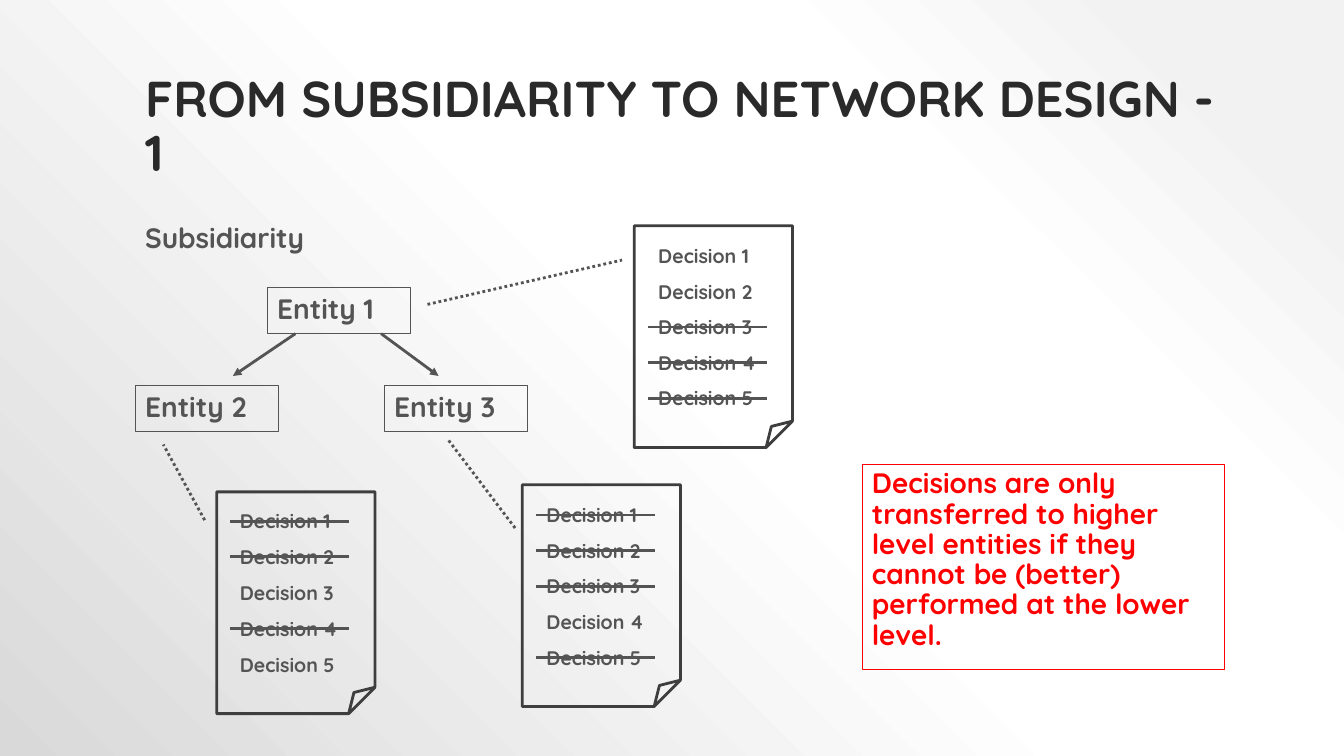
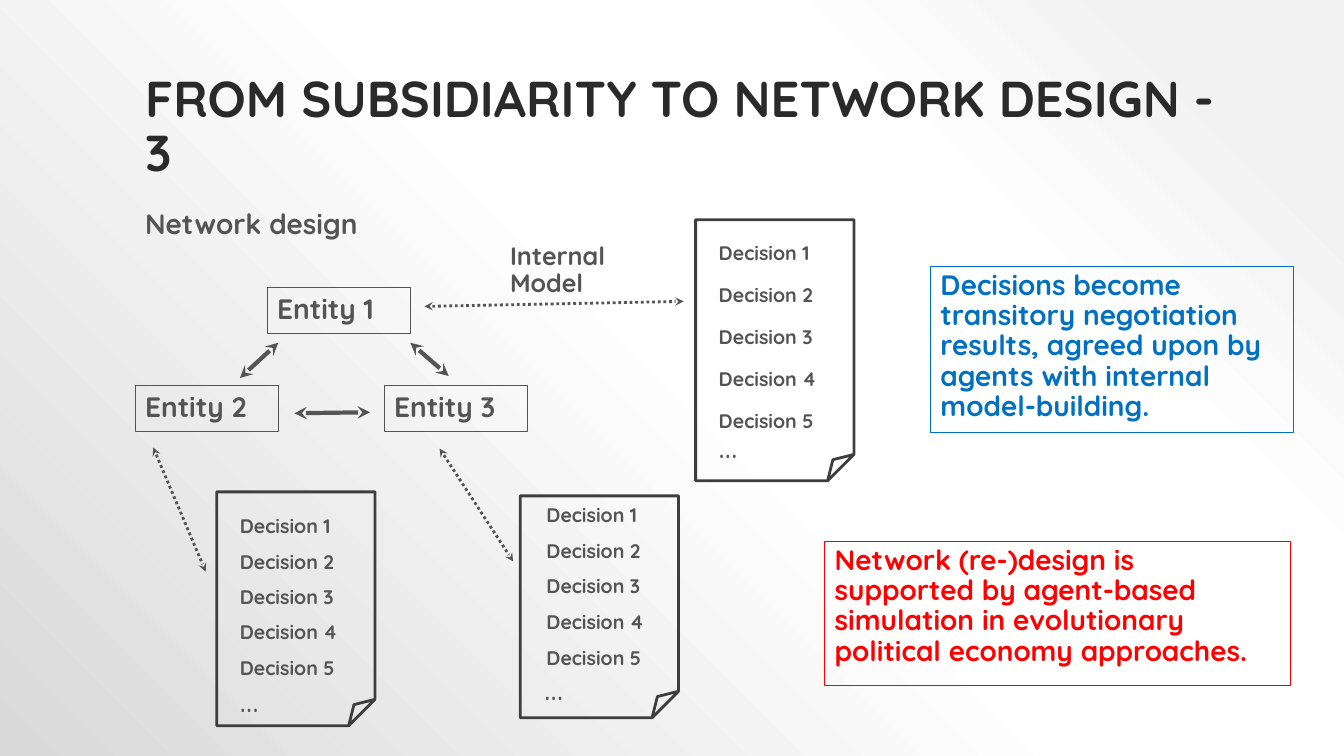
import pptx
import pptx.util
import pptx.dml.color
import pptx.enum.dml
import pptx.enum.shapes
import pptx.enum.text
import pptx.oxml
import pptx.oxml.ns
import lxml.etree

Inches = pptx.util.Inches
RGBColor = pptx.dml.color.RGBColor
SHAPE = pptx.enum.shapes.MSO_SHAPE
ANCHOR = pptx.enum.text.MSO_ANCHOR
qn = pptx.oxml.ns.qn

INK = RGBColor(0x2A, 0x2A, 0x2A)
GREY = RGBColor(0x54, 0x54, 0x54)
EDGE = RGBColor(0x3E, 0x3E, 0x3E)
RED = RGBColor(0xFF, 0x00, 0x00)
BLUE = RGBColor(0x00, 0x70, 0xC0)

BACKGROUND = (
    '<a:gradFill xmlns:a="http://schemas.openxmlformats.org/drawingml/2006/main" rotWithShape="1"><a:gsLst>'
    + "".join(f'<a:gs pos="{pos}000"><a:srgbClr val="{color}"/></a:gs>' for pos, color in
              [(10, "F2F2F2"), (28, "FFFFFF"), (48, "FFFFFF"), (100, "D9D9D9")])
    + '</a:gsLst><a:path path="circle"><a:fillToRect l="100000" b="100000"/></a:path></a:gradFill>'
)


def write(sp, text, size, color=GREY, bold=True, anchor=ANCHOR.TOP, wrap=True):
    tf = sp.text_frame
    frame = {"word_wrap": wrap, "auto_size": pptx.enum.text.MSO_AUTO_SIZE.NONE, "vertical_anchor": anchor}
    for name, value in frame.items():
        setattr(tf, name, value)
    p = tf.paragraphs[0]
    p.alignment = pptx.enum.text.PP_ALIGN.LEFT
    p.line_spacing = 0.9
    r = p.add_run()
    r.text = text
    r.font.color.rgb = color
    for name, value in {"name": "Quicksand", "size": pptx.util.Pt(size), "bold": bold}.items():
        setattr(r.font, name, value)


def add_line(s, ends, width=2, dotted=False, head=None, tail=None):
    c = s.shapes.add_connector(pptx.enum.shapes.MSO_CONNECTOR.STRAIGHT, *map(Inches, ends))
    c.line.color.rgb = GREY
    c.line.width = pptx.util.Pt(width)
    if dotted:
        c.line.dash_style = pptx.enum.dml.MSO_LINE.ROUND_DOT
    spPr = c._element.spPr
    for tag, kind in [("a:headEnd", head), ("a:tailEnd", tail)]:
        if kind:
            lxml.etree.SubElement(spPr.find(qn("a:ln")), qn(tag)).set("type", kind)
    lxml.etree.SubElement(spPr, qn("a:effectLst"))


entities = [
    ((2.65, 2.85, 1.42, 0.46), "Entity 1"),
    ((1.34, 3.82, 1.42, 0.46), "Entity 2"),
    ((3.81, 3.82, 1.42, 0.46), "Entity 3"),
]

slides = [
    {
        "title": "FROM SUBSIDIARITY TO NETWORK DESIGN - 1",
        "labels": [((1.34, 2.18, 2.02, 0.47), "Subsidiarity", 20)],
        "sheets": [
            ((6.29, 2.24, 1.57, 2.2), 6.43, 2.4, 3.81, [3, 4, 5]),
            ((5.18, 4.81, 1.57, 2.2), 5.32, 4.97, 6.38, [1, 2, 3, 5]),
            ((2.15, 4.88, 1.57, 2.2), 2.28, 5.03, 6.45, [1, 2, 4]),
        ],
        "ellipses": [],
        "notes": [
            ((8.55, 4.61, 3.6, 2.03), RED,
             "Decisions are only transferred to higher level entities if they cannot be (better) "
             "performed at the lower level."),
        ],
        "links": [(2.93, 3.31, 2.31, 3.73), (3.78, 3.31, 4.35, 3.73)],
        "link_format": {"tail": "triangle"},
        "dotted": [(4.24, 3.02, 6.17, 2.58), (4.45, 4.37, 5.11, 5.24), (2.03, 5.16, 1.62, 4.41)],
        "dotted_format": {"dotted": True},
    },
    {
        "title": "FROM SUBSIDIARITY TO NETWORK DESIGN - 3",
        "labels": [
            ((1.34, 2.04, 2.45, 0.53), "Network design", 20),
            ((4.96, 2.37, 1.42, 0.65), "Internal Model", 18),
        ],
        "sheets": [
            ((6.9, 2.18, 1.57, 2.59), 7.03, 2.37, 4.03, []),
            ((5.16, 4.92, 1.57, 2.2), 5.32, 4.97, 6.38, []),
            ((2.15, 4.88, 1.57, 2.32), 2.28, 5.08, 6.48, []),
        ],
        "ellipses": [(7.03, 4.21), (5.3, 6.61), (2.28, 6.73)],
        "notes": [
            ((9.23, 2.64, 3.6, 1.65), BLUE,
             "Decisions become transitory negotiation results, agreed upon by agents with internal model-building."),
            ((8.18, 5.37, 4.62, 1.43), RED,
             "Network (re-)design is supported by agent-based simulation in evolutionary political "
             "economy approaches."),
        ],
        "links": [(4.07, 3.4, 4.45, 3.73), (2.38, 3.75, 2.76, 3.4), (2.92, 4.1, 3.67, 4.09)],
        "link_format": {"width": 3, "head": "stealth", "tail": "stealth"},
        "dotted": [(4.21, 3.04, 6.78, 2.99), (1.52, 4.44, 2.04, 5.67), (4.36, 4.45, 5.09, 5.57)],
        "dotted_format": {"dotted": True, "head": "stealth", "tail": "stealth"},
    },
]

prs = pptx.Presentation()
prs.slide_width = Inches(13.33)
prs.slide_height = Inches(7.5)

master = prs.slide_master
master.background.fill.solid()
solid = master._element.find(".//" + qn("p:bgPr")).find(qn("a:solidFill"))
solid.getparent().replace(solid, pptx.oxml.parse_xml(BACKGROUND))

for content in slides:
    s = prs.slides.add_slide(prs.slide_layouts[5])
    title = s.shapes.title
    for name, value in {"left": 1.34, "top": 0.92, "width": 10.98, "height": 0.94}.items():
        setattr(title, name, Inches(value))
    write(title, content["title"], 36, INK, anchor=ANCHOR.BOTTOM)

    for at, text, size in content["labels"]:
        write(s.shapes.add_textbox(*map(Inches, at)), text, size)

    outlines = [(SHAPE.FOLDED_CORNER, sheet[0], EDGE, 2, "", ANCHOR.TOP) for sheet in content["sheets"]]
    outlines += [(SHAPE.RECTANGLE, at, GREY, 0.75, text, ANCHOR.MIDDLE) for at, text in entities]
    outlines += [(SHAPE.RECTANGLE, at, color, 0.75, text, ANCHOR.TOP) for at, color, text in content["notes"]]
    for kind, at, color, width, text, anchor in outlines:
        sp = s.shapes.add_shape(kind, *map(Inches, at))
        sp.shadow.inherit = False
        sp.fill.background()
        sp.line.color.rgb = color
        sp.line.width = pptx.util.Pt(width)
        if text:
            write(sp, text, 20, color, anchor=anchor)

    for _, left, first, last, struck in content["sheets"]:
        for number in range(1, 6):
            top = first + (last - first) * (number - 1) / 4
            box = s.shapes.add_textbox(Inches(left), Inches(top), Inches(1.18), Inches(0.31))
            write(box, f"Decision {number}", 14)
            if number in struck:
                add_line(s, (left, top + 0.14, left + 1.18, top + 0.14))

    for left, top in content["ellipses"]:
        box = s.shapes.add_textbox(Inches(left), Inches(top), Inches(0.54), Inches(0.46))
        write(box, "…", 24, bold=False, wrap=False)

    for ends in content["links"]:
        add_line(s, ends, **content["link_format"])
    for ends in content["dotted"]:
        add_line(s, ends, **content["dotted_format"])

prs.save("out.pptx")
